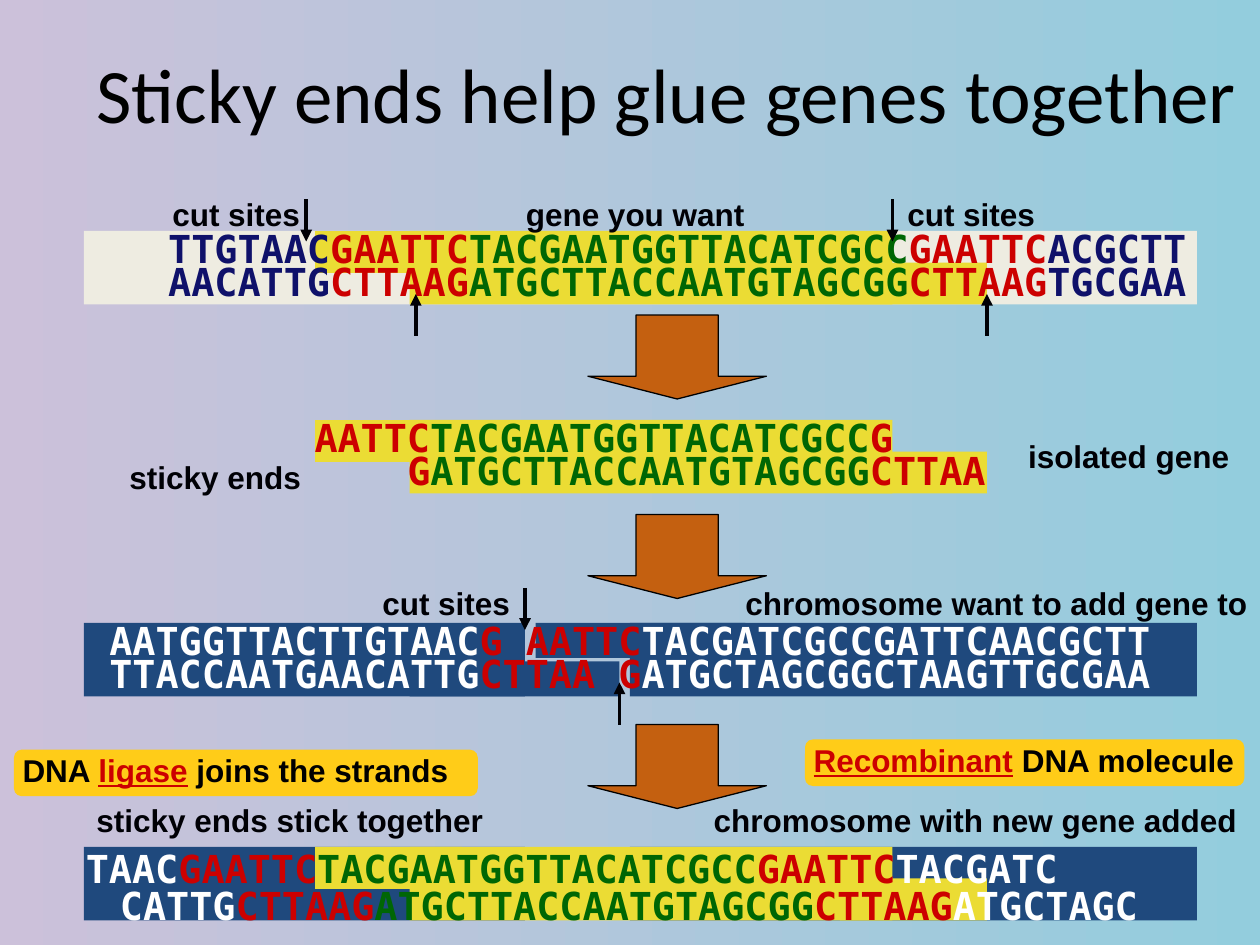
from typing import NamedTuple, Sequence

from lxml import etree
from pptx import Presentation
from pptx.dml.color import RGBColor
from pptx.enum import shapes, text
from pptx.oxml import ns
from pptx.util import Pt

INK, BLACK, WHITE = "000005", "000000", "FFFFFF"
RED, GREEN, NAVY = "CC0000", "006604", "0F116A"
YELLOW, BLUE, CREAM, ORANGE, GOLD = "EBDC34", "1F497D", "EEECE1", "C46010", "FFCC18"
LEFT, CENTER, RIGHT = text.PP_ALIGN.LEFT, text.PP_ALIGN.CENTER, text.PP_ALIGN.RIGHT
RECT = shapes.MSO_SHAPE.RECTANGLE
BAND_HEIGHT = 42


class Box(NamedTuple):
    left: float
    top: float
    width: float
    height: float


class Piece(NamedTuple):
    wording: str
    color: str
    underline: bool = False


class Strand(NamedTuple):
    pieces: Sequence[Piece]
    spacing: float = 0.5
    after: float = 0
    indent: float = 0
    align: text.PP_ALIGN = CENTER


class Label(NamedTuple):
    wording: str
    left: float
    top: float
    width: float
    align: text.PP_ALIGN = CENTER


class CutMark(NamedTuple):
    x: float
    start: float
    end: float


def rgb(color: str) -> RGBColor:
    return RGBColor.from_string(color)


def apply(target, values: dict) -> None:
    for name, value in values.items():
        setattr(target, name, value)


def add_block(slide, kind, box: Box, fill: str, outline: str = "", adjust: Sequence[float] = ()):
    block = slide.shapes.add_shape(kind, *map(Pt, box))
    block.shadow.inherit = False
    block.fill.solid()
    block.fill.fore_color.rgb = rgb(fill)
    if outline:
        block.line.color.rgb = rgb(outline)
        block.line.width = Pt(0.75)
    else:
        block.line.fill.background()
    for index, value in enumerate(adjust):
        block.adjustments[index] = value
    return block


def write(paragraph, pieces: Sequence[Piece], font: str, size: float, bold: bool = True) -> None:
    for piece in pieces:
        run = paragraph.add_run()
        run.text = piece.wording
        apply(run.font, dict(name=font, size=Pt(size), bold=bold, underline=piece.underline))
        run.font.color.rgb = rgb(piece.color)


def add_frame(slide, box: Box):
    frame = slide.shapes.add_textbox(*map(Pt, box)).text_frame
    apply(frame, dict(word_wrap=True, vertical_anchor=text.MSO_ANCHOR.MIDDLE))
    return frame


def add_label(slide, label: Label) -> None:
    frame = add_frame(slide, Box(label.left, label.top, label.width, 29))
    frame.paragraphs[0].alignment = label.align
    write(frame.paragraphs[0], [Piece(label.wording, INK)], "Arial", 18)


def add_strands(slide, box: Box, strands: Sequence[Strand]) -> None:
    frame = add_frame(slide, box)
    frame.auto_size = text.MSO_AUTO_SIZE.SHAPE_TO_FIT_TEXT
    for index, strand in enumerate(strands):
        paragraph = frame.add_paragraph() if index else frame.paragraphs[0]
        apply(paragraph, dict(alignment=strand.align, line_spacing=strand.spacing,
                              space_after=Pt(strand.after)))
        paragraph._p.get_or_add_pPr().set("marL", str(Pt(strand.indent)))
        write(paragraph, strand.pieces, "DejaVu Sans Mono", 22)


def add_cut_mark(slide, mark: CutMark) -> None:
    arrow = slide.shapes.add_connector(
        shapes.MSO_CONNECTOR.STRAIGHT, *map(Pt, (mark.x, mark.start, mark.x, mark.end)))
    arrow.line.color.rgb = rgb(INK)
    arrow.line.width = Pt(2.25)
    etree.SubElement(arrow.line._get_or_add_ln(), ns.qn("a:tailEnd"), type="triangle")
    etree.SubElement(arrow._element.spPr, ns.qn("a:effectLst"))


def add_gene(slide, top: float) -> None:
    """Highlight the gene with its two overhanging ends."""
    for box in (Box(234, top, 276, BAND_HEIGHT), Box(180, top, 84, 24), Box(480, top + 18, 84, 24)):
        add_block(slide, RECT, box, YELLOW)


def add_chromosome(slide, top: float) -> None:
    """Draw the two outer parts of the cut chromosome."""
    for left, width in ((360, 324), (48, 252)):
        add_block(slide, RECT, Box(left, top, width, BAND_HEIGHT), BLUE)


def add_callout(slide, box: Box, pieces: Sequence[Piece], wrap: bool) -> None:
    frame = add_block(slide, shapes.MSO_SHAPE.ROUNDED_RECTANGLE, box, GOLD,
                      adjust=[0.167]).text_frame
    inset = Pt(3.6)
    apply(frame, dict(margin_left=inset, margin_right=inset, margin_top=inset,
                      margin_bottom=inset, word_wrap=wrap,
                      vertical_anchor=text.MSO_ANCHOR.TOP))
    apply(frame.paragraphs[0], dict(alignment=LEFT, line_spacing=0.8))
    write(frame.paragraphs[0], pieces, "Arial", 18)


GENE_TOP = Piece("TACGAATGGTTACATCGCC", GREEN)
GENE_BOTTOM = Piece("ATGCTTACCAATGTAGCGG", GREEN)
SITE_TOP, SITE_BOTTOM = Piece("GAATTC", RED), Piece("CTTAAG", RED)

SOURCE_DNA = [
    Strand([Piece("TTGTAAC", NAVY), SITE_TOP, GENE_TOP, SITE_TOP, Piece("ACGCTT", NAVY)], after=6),
    Strand([Piece("AACATTG", NAVY), SITE_BOTTOM, GENE_BOTTOM, SITE_BOTTOM, Piece("TGCGAA", NAVY)]),
]
ISOLATED_GENE = [
    Strand([Piece("AATTC", RED), GENE_TOP, Piece("G", RED)], after=6),
    Strand([Piece("G", RED), GENE_BOTTOM, Piece("CTTAA", RED)], indent=106),
]
CUT_CHROMOSOME = [
    Strand([Piece("AATGGTTACTTGTAAC", WHITE), Piece("G AATTC", RED),
            Piece("TACGATCGCCGATTCAACGCTT", WHITE)], after=6),
    Strand([Piece("TTACCAATGAACATTG", WHITE), Piece("CTTAA G", RED),
            Piece("ATGCTAGCGGCTAAGTTGCGAA", WHITE)]),
]
JOINED_CHROMOSOME = [
    Strand([Piece("TAAC", WHITE), SITE_TOP, GENE_TOP, SITE_TOP, Piece("TACGATC", WHITE)],
           spacing=0.8, indent=42, align=LEFT),
    Strand([Piece("CATTG", WHITE), SITE_BOTTOM, GENE_BOTTOM, SITE_BOTTOM,
            Piece("ATGCTAGC", WHITE)], spacing=0.8, after=6, indent=61.5, align=LEFT),
]
LABELS = [
    Label("gene you want", 282, 108, 162),
    Label("cut sites", 504, 108, 102),
    Label("cut sites", 84, 108, 102),
    Label("isolated gene", 576, 246, 138),
    Label("sticky ends", 54, 258, 138),
    Label("cut sites", 204, 330, 102),
    Label("chromosome want to add gene to", 330, 330, 390, RIGHT),
    Label("chromosome with new gene added", 324, 454, 390, RIGHT),
    Label("sticky ends stick together", 48, 454, 240, LEFT),
]
CUT_MARKS = [CutMark(175, 114, 138), CutMark(237.6, 192, 168), CutMark(564, 192, 168),
             CutMark(510, 114, 138), CutMark(354, 414, 390), CutMark(300, 336, 360)]


def main() -> None:
    deck = Presentation()
    apply(deck, dict(slide_width=Pt(720), slide_height=Pt(540)))
    slide = deck.slides.add_slide(deck.slide_layouts[6])
    backdrop = slide.background.fill
    backdrop.gradient()
    backdrop.gradient_angle = 0
    for stop, color in zip(backdrop.gradient_stops, ("CCC1DA", "93CDDD")):
        stop.color.rgb = rgb(color)

    title = add_frame(slide, Box(48, 23, 672, 60))
    write(title.paragraphs[0], [Piece("Sticky ends help glue genes together", BLACK)],
          "Calibri", 44, bold=False)

    add_block(slide, RECT, Box(48, 132, 636, BAND_HEIGHT), CREAM)
    add_chromosome(slide, 356)
    for box in (Box(306, 356, 120, 20), Box(234, 378, 120, 20)):
        add_block(slide, RECT, box, BLUE)
    add_chromosome(slide, 484)
    for top in (132, 240, 484):
        add_gene(slide, top)

    add_strands(slide, Box(35.5, 136, 703, 40), SOURCE_DNA)
    add_strands(slide, Box(60, 244, 570, 40), ISOLATED_GENE)
    add_strands(slide, Box(0, 360, 720, 40), CUT_CHROMOSOME)
    add_strands(slide, Box(0, 484, 720, 50), JOINED_CHROMOSOME)

    for mark in CUT_MARKS:
        add_cut_mark(slide, mark)
    for top in (180, 294, 414):
        add_block(slide, shapes.MSO_SHAPE.DOWN_ARROW, Box(336, top, 102, 48), ORANGE, BLACK,
                  [0.461, 0.271])
    for label in LABELS:
        add_label(slide, label)

    add_callout(slide, Box(8, 428.4, 265, 26.6), [
        Piece("DNA ", BLACK), Piece("ligase", RED, True), Piece(" joins the strands", BLACK)], True)
    add_callout(slide, Box(460, 422.6, 251, 26.6), [
        Piece("Recombinant", RED, True), Piece(" DNA molecule", BLACK)], False)
    deck.save("out.pptx")


if __name__ == "__main__":
    main()
